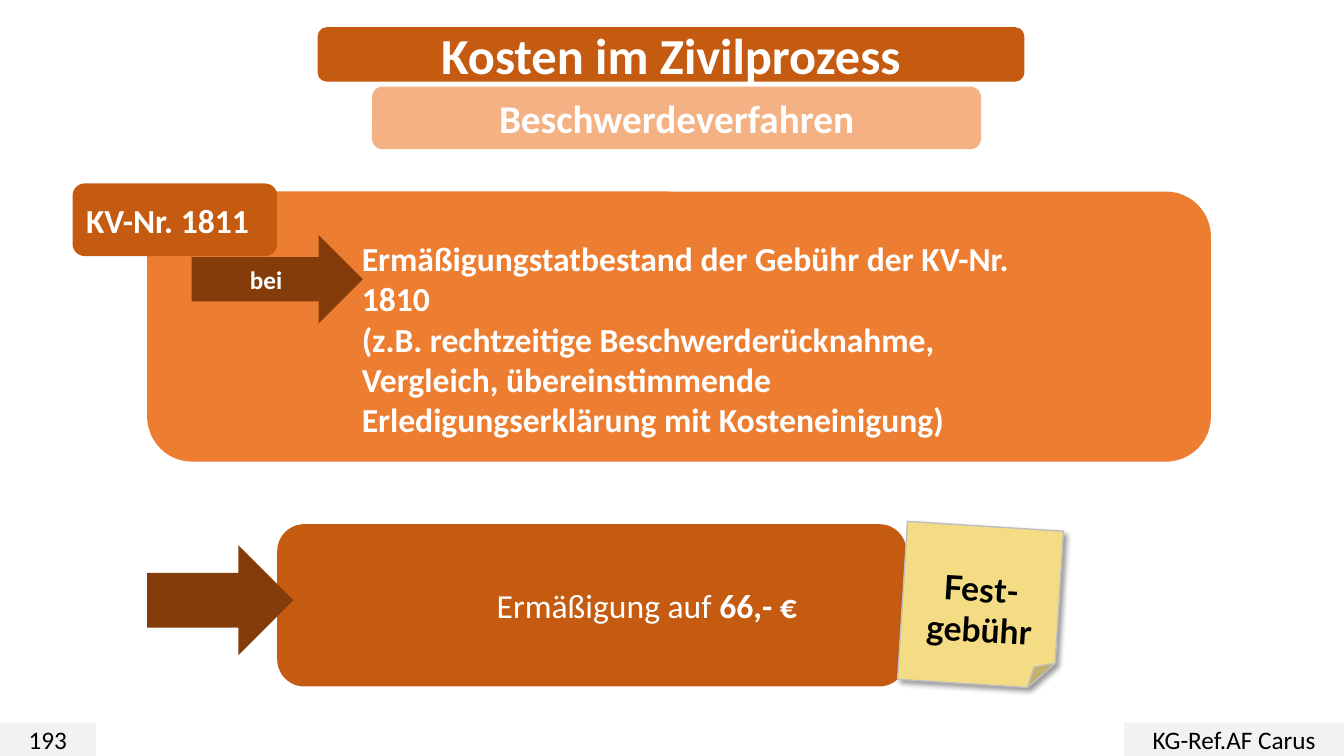
from dataclasses import dataclass

from lxml import etree
from pptx import Presentation
from pptx.dml.color import RGBColor
from pptx.enum.shapes import MSO_SHAPE as Preset
from pptx.enum.text import MSO_ANCHOR as Anchor, MSO_AUTO_SIZE as AutoSize, PP_ALIGN as Align
from pptx.oxml import parse_xml
from pptx.oxml.ns import nsdecls
from pptx.util import Inches, Pt

WHITE, BLACK, GRAY, SILVER = "FFFFFF", "000000", "F2F2F2", "BFBFBF"
RUST, ORANGE, PEACH, BROWN, YELLOW = "C55A11", "ED7D31", "F4B183", "843C0B", "F4DC84"


@dataclass
class Box:
    left: float
    top: float
    width: float
    height: float

    def inner(self, dx, dy, width, height):
        return Box(self.left + dx, self.top + dy, width, height)

    def lengths(self):
        return [Inches(n) for n in (self.left, self.top, self.width, self.height)]


def paint(color_format, color):
    color_format.rgb = RGBColor.from_string(color)


def add_block(shapes, preset, box, fill):
    block = shapes.add_shape(preset, *box.lengths())
    block.shadow.inherit = False
    block.fill.solid()
    paint(block.fill.fore_color, fill)
    block.line.fill.background()
    return block


def write(shape, text, size, color=WHITE, bold=True, align=Align.CENTER,
          anchor=Anchor.MIDDLE, font="Calibri"):
    frame = shape.text_frame
    frame.text = text
    frame.word_wrap = True
    frame.vertical_anchor = anchor
    for para in frame.paragraphs:
        para.alignment = align
        for span in para.runs:
            span.font.name = font
            span.font.size = Pt(size)
            span.font.bold = bold
            paint(span.font.color, color)
    return frame


def add_footer(page, box):
    number = add_block(page.shapes, Preset.RECTANGLE, box.inner(0, 0, 0.95, box.height), GRAY)
    write(number, "193", 18, BLACK, False)
    author_box = box.inner(box.width - 2.18, 0, 2.18, box.height)
    author = add_block(page.shapes, Preset.RECTANGLE, author_box, GRAY)
    write(author, "KG-Ref.AF Carus", 18, BLACK, False)


def add_heading(page, box):
    bar_box = box.inner(0, 0, box.width, 0.54)
    bar = add_block(page.shapes, Preset.ROUNDED_RECTANGLE, bar_box, RUST)
    title = page.shapes.title
    title.left, title.top, title.width, title.height = bar_box.lengths()
    bar._element.addnext(title._element)
    write(title, "Kosten im Zivilprozess", 36).auto_size = AutoSize.NONE
    subtitle_box = box.inner(0.54, 0.59, 6.04, 0.62)
    subtitle = add_block(page.shapes, Preset.ROUNDED_RECTANGLE, subtitle_box, PEACH)
    write(subtitle, "Beschwerdeverfahren", 28)


def add_reduction(page, box):
    group = page.shapes.add_group_shape().shapes
    panel_box = box.inner(1.29, 0, box.width - 1.29, box.height)
    panel = add_block(group, Preset.ROUNDED_RECTANGLE, panel_box, RUST)
    para = write(panel, "Ermäßigung auf ", 24, bold=False, align=Align.LEFT).paragraphs[0]
    para._p.get_or_add_pPr().set("marL", str(Inches(2)))
    amount = para.add_run()
    amount.text = "66,- €"
    amount.font.name = "Calibri"
    amount.font.size = Pt(24)
    amount.font.bold = True
    paint(amount.font.color, WHITE)
    add_block(group, Preset.RIGHT_ARROW, box.inner(0, 0.21, 1.45, 1.09), BROWN)


def add_shadow(shape):
    properties = shape._element.spPr
    effects = properties.find("{*}effectLst")
    effects.append(parse_xml(
        f'<a:outerShdw {nsdecls("a")} blurRad="{Pt(4)}" dist="{Pt(3)}" dir="2700000" '
        'algn="tl" rotWithShape="0"><a:srgbClr val="000000"><a:alpha val="40000"/>'
        '</a:srgbClr></a:outerShdw>'))


def add_note(page, box):
    note = add_block(page.shapes, Preset.FOLDED_CORNER, box, YELLOW)
    note.rotation = 3.6
    paint_line = note.line
    paint_line.fill.solid()
    paint(paint_line.color, SILVER)
    paint_line.width = Pt(1)
    add_shadow(note)
    frame = write(note, "Fest-gebühr", 24, BLACK, font="Lato")
    frame.margin_top = Inches(0.38)


def add_rule(page, box):
    group = page.shapes.add_group_shape().shapes
    add_block(group, Preset.ROUNDED_RECTANGLE, box.inner(0.74, 0.08, 10.55, 2.68), ORANGE)
    arrow = add_block(group, Preset.RIGHT_ARROW, box.inner(1.18, 0.51, 1.7, 0.88), BROWN)
    write(arrow, "bei", 18)
    label = add_block(group, Preset.ROUNDED_RECTANGLE, box.inner(0, 0, 2.03, 0.72), RUST)
    write(label, "KV-Nr. 1811", 24, align=Align.LEFT)
    detail = group.add_textbox(*box.inner(2.77, 0.49, 6.67, 2.46).lengths())
    write(detail, "Ermäßigungstatbestand der Gebühr der KV-Nr. 1810\n"
          "(z.B. rechtzeitige Beschwerderücknahme, Vergleich, übereinstimmende "
          "Erledigungserklärung mit Kosteneinigung)", 24, align=Align.LEFT, anchor=Anchor.TOP)


def main():
    deck = Presentation()
    deck.slide_width, deck.slide_height = Inches(13.33), Inches(7.5)
    page = deck.slides.add_slide(deck.slide_layouts[5])
    add_footer(page, Box(0, 7.17, 13.33, 0.33))
    add_heading(page, Box(3.15, 0.27, 7.01, 1.21))
    add_reduction(page, Box(1.46, 5.2, 7.53, 1.61))
    add_note(page, Box(8.95, 5.22, 1.55, 1.57))
    add_rule(page, Box(0.72, 1.82, 11.29, 2.76))
    deck.save("out.pptx")


if __name__ == "__main__":
    main()
